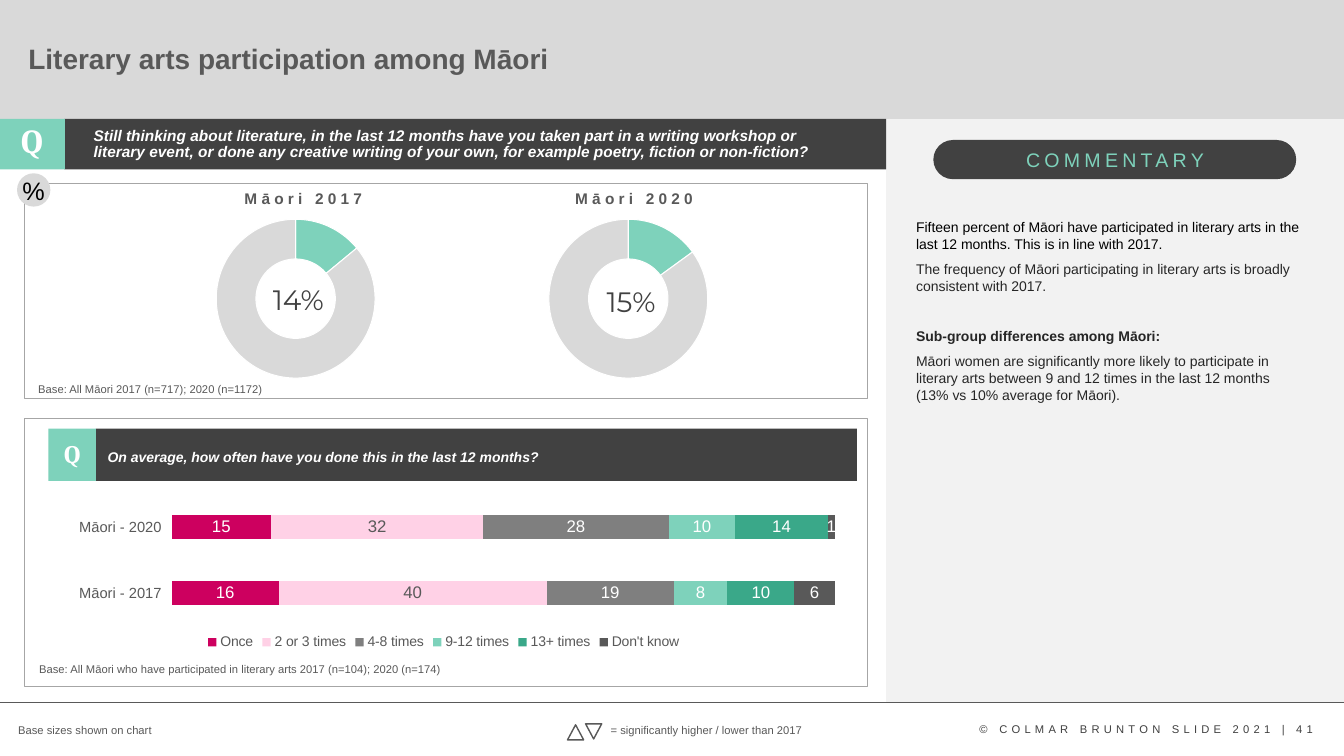
from lxml import etree
from pptx import Presentation
from pptx.chart.data import CategoryChartData
from pptx.dml.color import RGBColor
from pptx.enum import chart as charts, shapes, text
from pptx.oxml import parse_xml
from pptx.oxml.ns import nsdecls, qn
from pptx.util import Pt

COLORS = {
    "white": "FFFFFF", "black": "000000", "band": "414141", "mint": "7ED2BB",
    "silver": "D9D9D9", "panel": "F2F2F2", "body": "595959", "frame": "A6A6A6",
    "ink": "262626", "copyright": "404040", "pink": "CD005F", "blush": "FFD1E6",
    "gray": "7F7F7F", "green": "3AA889",
}

# Content
TITLE = "Literary arts participation among Māori"
QUESTION = ("Still thinking about literature, in the last 12 months have you taken part in a "
            "writing workshop or literary event, or done any creative writing of your own, "
            "for example poetry, fiction or non-fiction?")
FREQUENCY_QUESTION = "On average, how often have you done this in the last 12 months?"
# heading, percent, chart left, heading left, percent top
WAVES = [
    ("Māori 2017", 14, 115.2, 165.6, 198),
    ("Māori 2020", 15, 352.8, 401.8, 199.4),
]
GROUPS = ["Māori - 2017", "Māori - 2020"]
# answer, values, fill, label color
FREQUENCIES = [
    ("Once", (16, 15), "pink", "white"),
    ("2 or 3 times", (40, 32), "blush", "body"),
    ("4-8 times", (19, 28), "gray", "white"),
    ("9-12 times", (8, 10), "mint", "white"),
    ("13+ times", (10, 14), "green", "white"),
    ("Don't know", (6, 1), "body", "white"),
]
# text, color, bold, space before
COMMENTARY = [
    ("Fifteen percent of Māori have participated in literary arts in the last 12 months. "
     "This is in line with 2017.", "black", False, 0),
    ("The frequency of Māori participating in literary arts is broadly consistent with 2017.",
     "ink", False, 6),
    ("Sub-group differences among Māori:", "ink", True, 23.5),
    ("Māori women are significantly more likely to participate in literary arts between 9 and 12 "
     "times in the last 12 months (13% vs 10% average for Māori).", "ink", False, 6),
]
# text, left, top, width
SMALL_NOTES = [
    ("Base: All Māori 2017 (n=717); 2020 (n=1172)", 20.2, 269.3, 340),
    ("Base: All Māori who have participated in literary arts 2017 (n=104); 2020 (n=174)",
     20.9, 469.4, 520.6),
    ("Base sizes shown on chart", 5.8, 513.4, 251),
    ("= significantly higher / lower than 2017", 429.1, 513.4, 160),
]

deck = Presentation()
deck.slide_width, deck.slide_height = Pt(960), Pt(540)
page = deck.slides.add_slide(deck.slide_layouts[5])


def rgb(name):
    return RGBColor.from_string(COLORS[name])


def set_font(font, size, color, face="Arial", bold=False, italic=False):
    font.size, font.name = Pt(size), face
    font.bold, font.italic = bold, italic
    font.color.rgb = rgb(color)


def write(para, words, size=8, color="body", align="LEFT", line=None, before=0,
          spacing=0, **style):
    para.alignment = getattr(text.PP_ALIGN, align)
    para.space_before = Pt(before)
    if line:
        para.line_spacing = line
    span = para.add_run()
    span.text = words
    set_font(span.font, size, color, **style)
    if spacing:
        span._r.get_or_add_rPr().set("spc", str(spacing * 100))


def add_text(words, place, wrap=True, **style):
    box = page.shapes.add_textbox(*map(Pt, place))
    box.text_frame.word_wrap = wrap
    write(box.text_frame.paragraphs[0], words, **style)


def add_block(place, fill=None, line=None, width=0.5, kind="RECTANGLE"):
    block = page.shapes.add_shape(getattr(shapes.MSO_SHAPE, kind), *map(Pt, place))
    block.shadow.inherit = False
    if fill:
        block.fill.solid()
        block.fill.fore_color.rgb = rgb(fill)
    else:
        block.fill.background()
    if line:
        block.line.color.rgb = rgb(line)
        block.line.width = Pt(width)
    else:
        block.line.fill.background()
    return block


def add_chart(kind, data, place, plot_area):
    chart = page.shapes.add_chart(getattr(charts.XL_CHART_TYPE, kind),
                                  *map(Pt, place), data).chart
    chart.has_title = False
    chart.has_legend = False
    set_font(chart.font, 10, "black")
    # Fixed inner plot area
    area = chart._chartSpace.chart.plotArea
    for layout in area.findall(qn("c:layout")):
        area.remove(layout)
    sides = "".join(f'<c:{tag} val="{value}"/>' for tag, value in zip("xywh", plot_area))
    area.insert(0, parse_xml(
        f'<c:layout {nsdecls("c")}><c:manualLayout><c:layoutTarget val="inner"/>'
        f'<c:xMode val="edge"/><c:yMode val="edge"/>{sides}</c:manualLayout></c:layout>'))
    return chart


# Header, side panel and footer
add_block((0, 0, 960, 85), "silver")
add_block((633, 85, 327, 417), "panel")
rule = page.shapes.add_connector(shapes.MSO_CONNECTOR.STRAIGHT, *map(Pt, (0, 502, 960, 502)))
rule.line.color.rgb = rgb("body")
rule.line.width = Pt(0.5)
etree.SubElement(rule._element.spPr, qn("a:effectLst"))
add_text("© COLMAR BRUNTON SLIDE 2021 | 41", (692.6, 512.6, 260, 17.3),
         color="copyright", spacing=3)

title = page.shapes.title
title.left, title.top, title.width, title.height = map(Pt, (13, 15, 805.7, 56.2))
title.text_frame.auto_size = text.MSO_AUTO_SIZE.NONE
title.text_frame.vertical_anchor = text.MSO_ANCHOR.MIDDLE
write(title.text_frame.paragraphs[0], TITLE, size=20, bold=True, line=0.9)
page.shapes._spTree.append(title._element)

# Main question
add_block((46, 85, 587, 36), "band")
add_block((0, 85, 46.4, 36), "mint")
add_text("Q", (5.8, 82, 34, 36), size=24, color="white", face="Cambria", bold=True,
         align="CENTER")
add_text(QUESTION, (59.8, 87.8, 547.2, 33), size=11, color="white", bold=True,
         italic=True, line=0.9)

# Participation rings
add_block((17.3, 131, 602.6, 153.4), line="frame")
for heading, percent, left, heading_left, percent_top in WAVES:
    data = CategoryChartData()
    data.categories = ["1", "2"]
    data.add_series("Series 1", (percent, 100 - percent))
    ring = add_chart("DOUGHNUT", data, (left, 139.7, 187.9, 143.3),
                     (0.209, 0.118, 0.604, 0.793))
    plot = ring.plots[0]
    plot.vary_by_categories = True
    plot._element.find(qn("c:holeSize")).set("val", "74")
    for index, color in enumerate(("mint", "silver")):
        look = plot.series[0].points[index].format
        look.fill.solid()
        look.fill.fore_color.rgb = rgb(color)
        look.line.color.rgb = rgb("white")
        look.line.width = Pt(0.75)
    add_text(f"{percent}%", (left + 67, percent_top, 61.9, 31.7), wrap=False, size=20,
             color="band", face="Montserrat", align="CENTER")
    add_text(heading, (heading_left, 131.8, 102.2, 20.9), wrap=False, size=11, bold=True,
             spacing=3, align="CENTER")

badge = add_block((12.2, 123.8, 23.8, 23.8), "silver", kind="OVAL")
frame = badge.text_frame
frame.margin_left = frame.margin_right = frame.margin_top = frame.margin_bottom = 0
frame.vertical_anchor = text.MSO_ANCHOR.MIDDLE
frame.word_wrap = False
write(frame.paragraphs[0], "%", size=18, color="black", align="CENTER")

# Frequency question and bars
add_block((17.3, 298.8, 602.6, 191.5), line="frame")
add_block((68.4, 306.2, 543.6, 37.4), "band")
add_block((34.6, 306.2, 34, 37.4), "mint")
add_text("Q", (34.6, 309.6, 34, 28.8), size=18, color="white", face="Cambria", bold=True,
         align="CENTER")
add_text(FREQUENCY_QUESTION, (69.8, 318.2, 530.6, 18.7), size=10, color="white",
         bold=True, italic=True, line=0.9)

data = CategoryChartData()
data.categories = GROUPS
for answer, values, fill, label in FREQUENCIES:
    data.add_series(answer, values)
bars = add_chart("BAR_STACKED_100", data, (26, 338.4, 581.8, 128.9),
                 (0.166, 0.114, 0.814, 0.73))
bars.has_legend = True
bars.legend.position = charts.XL_LEGEND_POSITION.BOTTOM
bars.legend.include_in_layout = False
set_font(bars.legend.font, 10, "body")
bars.value_axis.visible = False
bars.value_axis.has_major_gridlines = False
bars.category_axis.format.line.fill.background()
set_font(bars.category_axis.tick_labels.font, 10.5, "body")
plot = bars.plots[0]
plot.vary_by_categories = False
plot.gap_width, plot.overlap = 177, 100
for series, (answer, values, fill, label) in zip(plot.series, FREQUENCIES):
    series.format.fill.solid()
    series.format.fill.fore_color.rgb = rgb(fill)
    series.data_labels.show_value = True
    series.data_labels.position = charts.XL_LABEL_POSITION.CENTER
    set_font(series.data_labels.font, 12, label)

# Notes and significance key
for words, left, top, width in SMALL_NOTES:
    add_text(words, (left, top, width, 17))
for left, top, turn in ((405.4, 517.7, 0), (418.3, 517, 180)):
    add_block((left, top, 11.5, 10.8), "white", "body", 1, "ISOSCELES_TRIANGLE").rotation = turn

# Commentary
pill = add_block((666.7, 100, 259.2, 28), "band", kind="ROUNDED_RECTANGLE")
pill.adjustments[0] = 0.5
add_text("COMMENTARY", (725.8, 102.2, 145.4, 24.5), wrap=False, size=14, color="mint",
         spacing=3)
box = page.shapes.add_textbox(*map(Pt, (647.3, 152.6, 292.3, 140.4)))
box.text_frame.word_wrap = True
for index, (words, color, bold, before) in enumerate(COMMENTARY):
    para = box.text_frame.add_paragraph() if index else box.text_frame.paragraphs[0]
    write(para, words, size=10, color=color, bold=bold, before=before)

deck.save("out.pptx")
